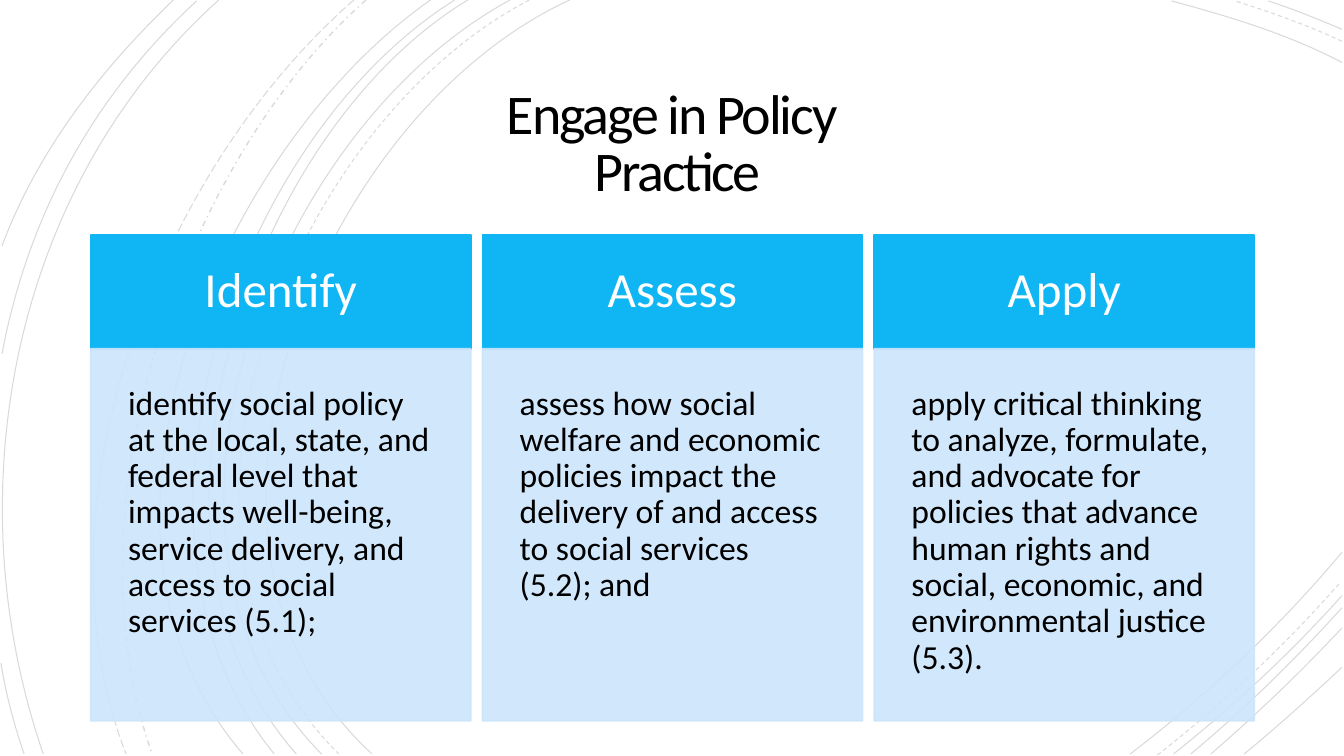
from copy import deepcopy
from dataclasses import dataclass

from lxml import etree
from pptx import Presentation
from pptx.dml.color import RGBColor
from pptx.enum.dml import MSO_LINE
from pptx.enum.shapes import MSO_SHAPE
from pptx.enum.text import MSO_ANCHOR, MSO_AUTO_SIZE, PP_ALIGN
from pptx.oxml.ns import qn
from pptx.util import Inches, Pt

SOLID, DASH = MSO_LINE.SOLID, MSO_LINE.DASH
DASH_DOT, LONG_DASH = MSO_LINE.DASH_DOT, MSO_LINE.LONG_DASH
RECT = MSO_SHAPE.RECTANGLE
TOP, MIDDLE = MSO_ANCHOR.TOP, MSO_ANCHOR.MIDDLE
LEFT, CENTER = PP_ALIGN.LEFT, PP_ALIGN.CENTER
NO_FIT = MSO_AUTO_SIZE.NONE
TITLE_ONLY = 5


@dataclass(frozen=True)
class Theme:
    """Colours, opacities and type sizes of the slide."""
    font: str = "Calibri"
    black: RGBColor = RGBColor(0, 0, 0)
    white: RGBColor = RGBColor(255, 255, 255)
    accent: RGBColor = RGBColor(0x10, 0xB6, 0xF4)
    panel: RGBColor = RGBColor(0xCC, 0xE5, 0xFB)
    arc_alpha: int = 15
    panel_alpha: int = 90
    title_size: int = 40
    head_size: int = 35
    body_size: int = 24
    border: float = 1.25


THEME = Theme()

ARCS = [
    (SOLID, 0.75, [
        [(5.65, 0), (3.15, 1.15), (1.43, 5.4), (3.69, 7.48)],
        [(13.31, 0.62), (12.78, 0.34), (12.18, 0.16), (11.62, 0.01)],
        [(11.21, 7.48), (11.97, 6.9), (12.69, 6.22), (13.31, 5.48)],
        [(5.06, 0), (2.7, 1.27), (1.1, 5.37), (3.19, 7.48)],
        [(13.31, 0.29), (13.07, 0.19), (12.83, 0.09), (12.58, 0.01)],
        [(11.64, 7.48), (12.23, 7.01), (12.8, 6.48), (13.31, 5.91)],
        [(4.64, 0), (2.44, 1.33), (1.1, 5.41), (2.94, 7.48)],
        [(11.81, 7.48), (12.34, 7.04), (12.84, 6.55), (13.31, 6.03)],
        [(4.51, 0), (2.31, 1.38), (0.97, 5.33), (2.72, 7.48)],
        [(12.01, 7.48), (12.46, 7.09), (12.9, 6.67), (13.31, 6.23)],
        [(4.27, 0), (2.17, 1.47), (0.53, 5.29), (2.41, 7.48)],
        [(12.34, 7.48), (12.67, 7.21), (12.99, 6.92), (13.31, 6.62)],
        [(2.17, 0), (0.11, 1.85), (-0.46, 4.9), (0.43, 7.48)],
        [(1.95, 0.01), (0.92, 0.96), (0.28, 2.14), (0.02, 3.51)],
        [(0.01, 6.58), (0.06, 6.89), (0.14, 7.19), (0.24, 7.48)],
        [(1.72, 0), (1, 0.69), (0.37, 1.5), (0.02, 2.44)],
    ]),
    (DASH, 0.75, [
        [(5.25, 0), (2.85, 1.25), (1.23, 5.37), (3.36, 7.48)],
        [(13.31, 0.41), (12.97, 0.25), (12.6, 0.12), (12.25, 0.01)],
        [(11.48, 7.49), (12.13, 6.98), (12.75, 6.4), (13.3, 5.77)],
    ]),
    (DASH_DOT, 1, [[(3.63, 0), (1.76, 1.66), (0.65, 5.09), (1.51, 7.48)]]),
    (LONG_DASH, 0.75, [[(3.51, 0), (1.57, 1.69), (0.29, 4.99), (1.25, 7.48)]]),
]

CARDS = [
    ("Identify", "identify social policy at the local, state, and federal level that "
     "impacts well-being, service delivery, and access to social services (5.1);"),
    ("Assess", "assess how social welfare and economic policies impact the delivery "
     "of and access to social services (5.2); and"),
    ("Apply", "apply critical thinking to analyze, formulate, and advocate for policies "
     "that advance human rights and social, economic, and environmental justice (5.3)."),
]


def set_attrs(obj, values):
    """Set every attribute named in values on obj."""
    for name, value in values.items():
        setattr(obj, name, value)


def set_alpha(sp, percent):
    """Make every solid colour of a shape's fill and line translucent."""
    for clr in sp._element.spPr.iter(qn("a:srgbClr")):
        etree.SubElement(clr, qn("a:alpha"), val=str(percent * 1000))


def write(sp, text, size, color, align, anchor, inset, spacing):
    """Fill a shape's text frame with one formatted paragraph."""
    tf = sp.text_frame
    sides = ("left", "top", "right", "bottom")
    set_attrs(tf, {f"margin_{side}": Inches(inset) for side in sides})
    set_attrs(tf, {"word_wrap": True, "auto_size": NO_FIT, "vertical_anchor": anchor})
    p = tf.paragraphs[0]
    set_attrs(p, {"text": text, "alignment": align, "line_spacing": spacing})
    for r in p.runs:
        set_attrs(r.font, {"name": THEME.font, "size": Pt(size)})
        r.font.color.rgb = color
    return p


def add_arc(s, points, dash, width):
    """Draw one cubic curve through its start, two handles and end."""
    start, *rest = [(Inches(x), Inches(y)) for x, y in points]
    builder = s.shapes.build_freeform(*start)
    builder.add_line_segments(rest, close=False)
    sp = builder.convert_to_shape()
    sp.shadow.inherit = False
    sp.fill.background()
    sp.line.color.rgb = THEME.black
    set_attrs(sp.line, {"width": Pt(width), "dash_style": dash})
    set_alpha(sp, THEME.arc_alpha)
    segments = list(sp._element.spPr.iter(qn("a:lnTo")))
    curve = etree.SubElement(segments[0].getparent(), qn("a:cubicBezTo"))
    for segment in segments:
        curve.append(segment[0])
        segment.getparent().remove(segment)


def add_backdrop(s):
    """Draw the sweeping arcs behind the content."""
    for dash, width, curves in ARCS:
        for points in curves:
            add_arc(s, points, dash, width)


def add_title(s, text, x, y, w, h):
    """Place and format the title placeholder in front of the arcs."""
    sp = s.shapes.title
    s.shapes._spTree.append(sp._element)
    set_attrs(sp, {"left": Inches(x), "top": Inches(y),
                   "width": Inches(w), "height": Inches(h)})
    p = write(sp, text, THEME.title_size, THEME.black, CENTER, MIDDLE, 0.25, 0.85)
    for r in p.runs:
        r.font._element.set("spc", "-150")
    for br in p._p.findall(qn("a:br")):
        br.append(deepcopy(p.runs[0].font._element))


def add_panel(s, x, y, w, h, color):
    """Add a rectangle with matching fill and border."""
    sp = s.shapes.add_shape(RECT, Inches(x), Inches(y), Inches(w), Inches(h))
    sp.shadow.inherit = False
    sp.fill.solid()
    sp.fill.fore_color.rgb = color
    sp.line.color.rgb = color
    sp.line.width = Pt(THEME.border)
    return sp


def add_card(s, head, body, x, y, w, h, head_h=1.13):
    """Stack a heading band on a translucent text panel."""
    sp = add_panel(s, x, y, w, head_h, THEME.accent)
    write(sp, head, THEME.head_size, THEME.white, CENTER, MIDDLE, 0.3, 0.9)
    sp = add_panel(s, x, y + head_h, w, h - head_h, THEME.panel)
    set_alpha(sp, THEME.panel_alpha)
    write(sp, body, THEME.body_size, THEME.black, LEFT, TOP, 0.37, 0.9)


def add_cards(s, x, y, w, h, card_w=3.77):
    """Spread the cards evenly across the given box."""
    step = (w - card_w) / (len(CARDS) - 1)
    for i, (head, body) in enumerate(CARDS):
        add_card(s, head, body, x + i * step, y, card_w, h)


def main():
    """Build the slide and save it."""
    prs = Presentation()
    set_attrs(prs, {"slide_width": Inches(13.33), "slide_height": Inches(7.5)})
    s = prs.slides.add_slide(prs.slide_layouts[TITLE_ONLY])
    s.background.fill.solid()
    s.background.fill.fore_color.rgb = THEME.white
    add_backdrop(s)
    add_title(s, "Engage in Policy \vPractice", 1.43, 0.33, 10.58, 2.23)
    add_cards(s, 0.9, 2.33, 11.54, 4.82)
    prs.save("out.pptx")


if __name__ == "__main__":
    main()
